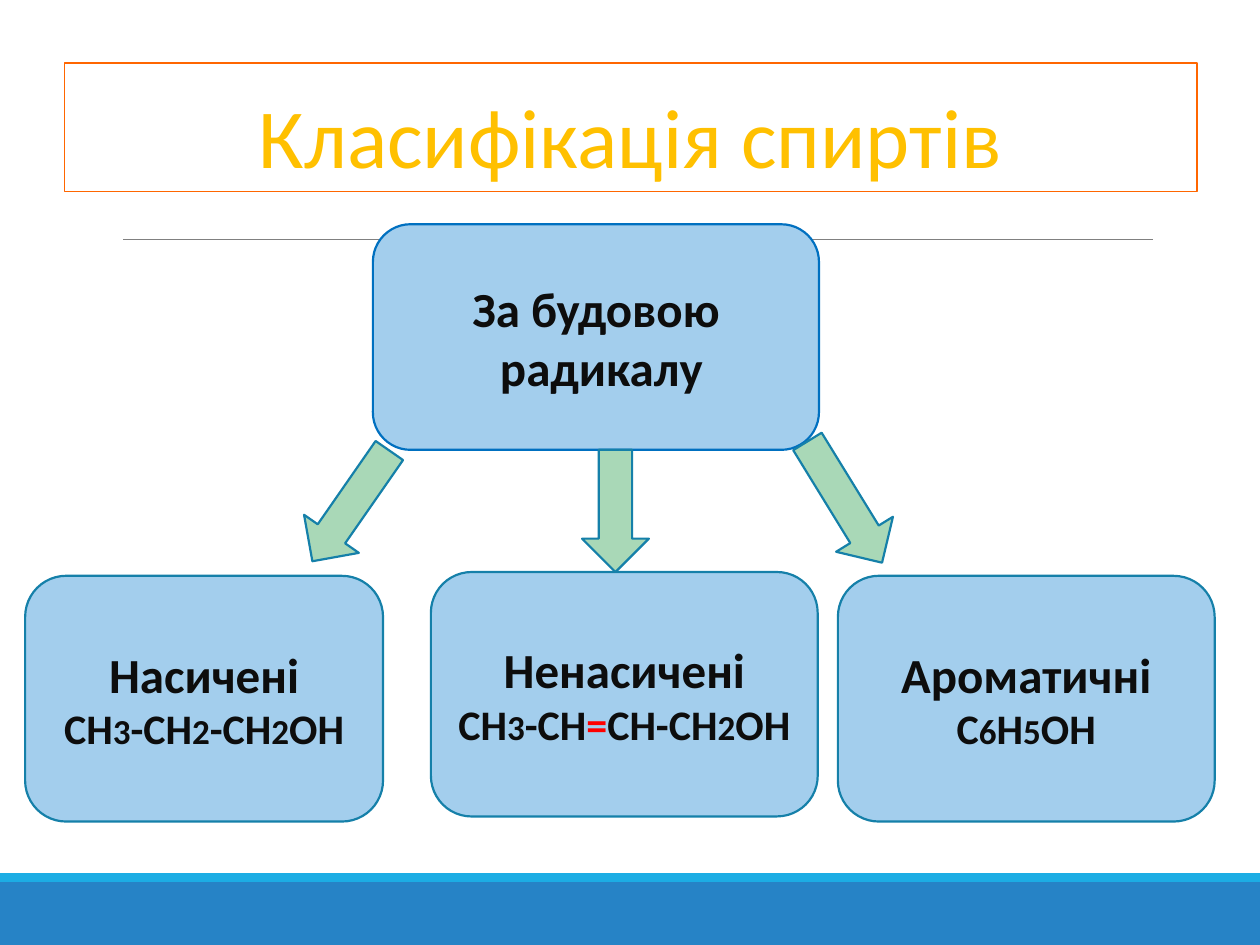
from itertools import groupby

from lxml.etree import SubElement
from pptx import Presentation
from pptx.dml.color import RGBColor
from pptx.enum.shapes import MSO_CONNECTOR, MSO_SHAPE
from pptx.enum.text import MSO_ANCHOR as Anchor, PP_ALIGN as Align
from pptx.oxml.ns import qn
from pptx.util import Emu, Pt

PX = 9144  # 100 px to the inch
FONT = "Calibri"

BLUE = RGBColor(0x26, 0x83, 0xC6)
CYAN = RGBColor(0x1C, 0xAD, 0xE4)
GRAY = RGBColor(0x80, 0x80, 0x80)
ORANGE = RGBColor(0xFF, 0x66, 0x00)
GOLD = RGBColor(0xFF, 0xC0, 0x00)
SKY = RGBColor(0xA3, 0xCE, 0xED)
ROOT_EDGE = RGBColor(0x00, 0x70, 0xC0)
TEAL = RGBColor(0x15, 0x80, 0xA9)
GREEN = RGBColor(0xA9, 0xD8, 0xB7)
INK = RGBColor(0x0D, 0x0D, 0x0D)
RED = RGBColor(0xFF, 0x00, 0x00)


def px(value):
    return Emu(value * PX)


def add_box(slide, kind, box, fill=None, line=None, width=1.25, rotation=0):
    shape = slide.shapes.add_shape(kind, *map(px, box))
    shape.shadow.inherit = False
    shape.rotation = rotation
    if fill is None:
        shape.fill.background()
    else:
        shape.fill.solid()
        shape.fill.fore_color.rgb = fill
    if line is None:
        shape.line.fill.background()
    else:
        shape.line.color.rgb = line
        shape.line.width = Pt(width)
    return shape


def add_text(paragraph, text, size=28, color=INK, bold=True):
    paragraph.alignment = Align.CENTER
    run = paragraph.add_run()
    run.text = text
    run.font.name = FONT
    run.font.size = Pt(size)
    run.font.bold = bold
    run.font.color.rgb = color


def add_formula(paragraph, formula):
    """Digits are smaller, and the double bond is red."""
    def role(char):
        return "digit" if char.isdigit() else "bond" if char == "=" else "atom"

    for kind, chars in groupby(formula, role):
        add_text(paragraph, "".join(chars), size=20 if kind == "digit" else 24,
                 color=RED if kind == "bond" else INK)


def add_backdrop(slide, box):
    left, top, width, height = box
    add_box(slide, MSO_SHAPE.RECTANGLE, (left, top + height - 50, width, 50), BLUE)
    add_box(slide, MSO_SHAPE.RECTANGLE, (left, top + height - 57, width, 7), CYAN)
    rule = slide.shapes.add_connector(
        MSO_CONNECTOR.STRAIGHT, px(left + 98), px(top + 190), px(left + 915), px(top + 190))
    rule.line.color.rgb = GRAY
    rule.line.width = Pt(0.5)
    SubElement(rule._element.spPr, qn("a:effectLst"))


def add_title(slide, box, text):
    shape = add_box(slide, MSO_SHAPE.RECTANGLE, box, line=ORANGE, width=0.75)
    frame = shape.text_frame
    frame.word_wrap = True
    frame.vertical_anchor = Anchor.BOTTOM
    frame.paragraphs[0].line_spacing = 0.85
    add_text(frame.paragraphs[0], text, size=48, color=GOLD, bold=False)


def add_card(slide, box, heading, second, add_second, edge=TEAL):
    shape = add_box(slide, MSO_SHAPE.ROUNDED_RECTANGLE, box, SKY, edge)
    frame = shape.text_frame
    frame.word_wrap = True
    frame.vertical_anchor = Anchor.MIDDLE
    add_text(frame.paragraphs[0], heading)
    add_second(frame.add_paragraph(), second)


def add_diagram(slide, box):
    left, top = box[:2]

    def place(x, y, width, height):
        return left + x, top + y, width, height

    # Root and its three classes
    add_card(slide, place(276, 0, 354, 179), "За будовою", " радикалу", add_text, ROOT_EDGE)
    classes = [
        ((0, 279, 284, 195), "Насичені", "СН3-СН2-СН2ОН"),
        ((322, 276, 307, 194), "Ненасичені", "СН3-СН=СН-СН2ОН"),
        ((645, 279, 299, 195), "Ароматичні", "С6Н5ОН"),
    ]
    for card, heading, formula in classes:
        add_card(slide, place(*card), heading, formula, add_formula)

    # Arrows from the root to each class
    arrows = [
        (MSO_SHAPE.DOWN_ARROW, (442, 179, 53, 97), 0),
        (MSO_SHAPE.LEFT_ARROW, (205, 197, 107, 53), 304.8),
        (MSO_SHAPE.DOWN_ARROW, (624, 164, 53, 113), 328.4),
    ]
    for kind, arrow, rotation in arrows:
        add_box(slide, kind, place(*arrow), GREEN, TEAL, rotation=rotation)


def main():
    presentation = Presentation()
    presentation.slide_width, presentation.slide_height = px(1000), px(750)
    slide = presentation.slides.add_slide(presentation.slide_layouts[6])
    add_backdrop(slide, (0, 0, 1000, 750))
    add_title(slide, (51, 50, 899, 102), "Класифікація спиртів")
    add_diagram(slide, (20, 178, 944, 474))
    presentation.save("out.pptx")


if __name__ == "__main__":
    main()
